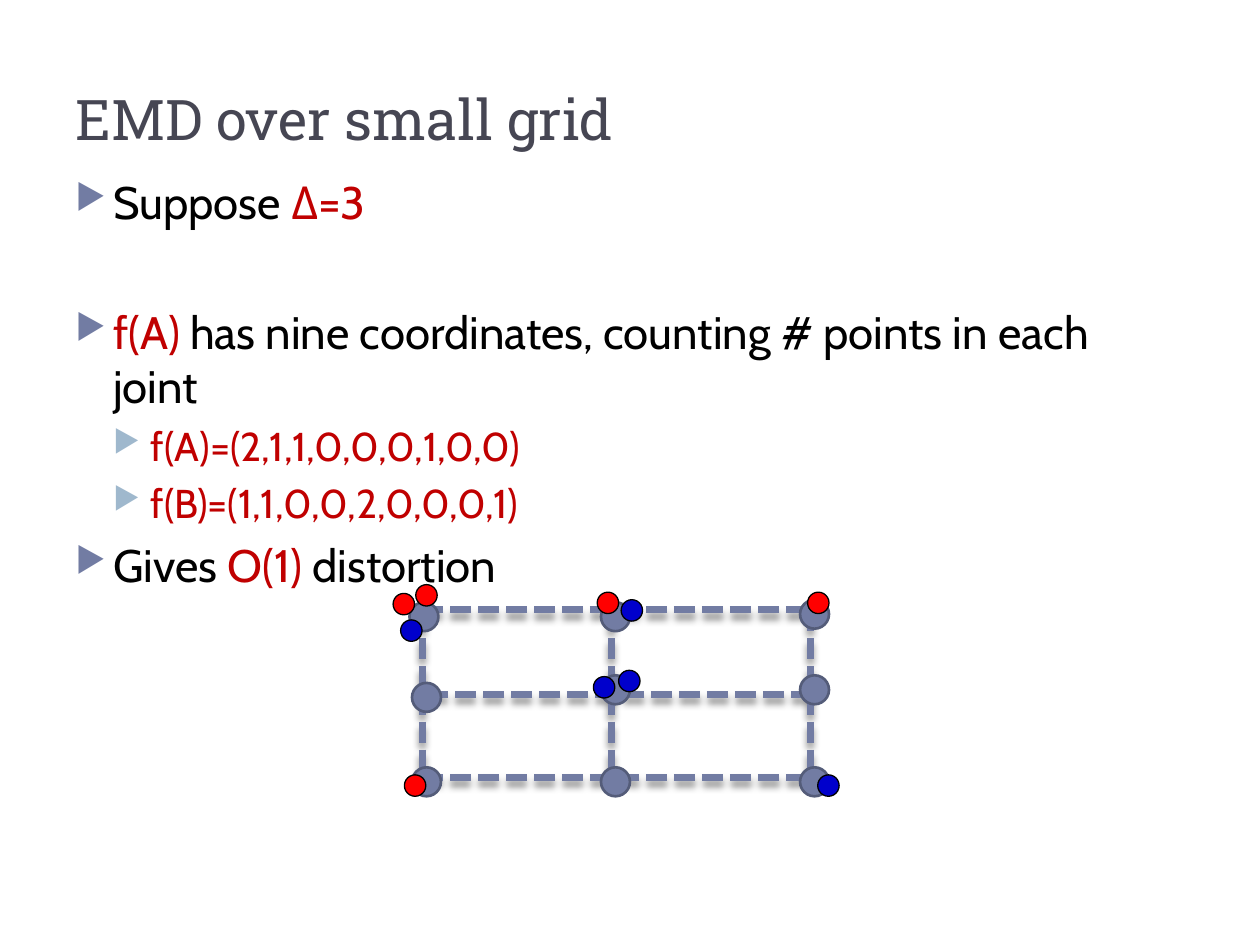
from lxml import etree
from pptx import Presentation
from pptx.dml.color import RGBColor
from pptx.enum.dml import MSO_LINE
from pptx.enum.shapes import MSO_CONNECTOR, MSO_SHAPE
from pptx.enum.text import MSO_ANCHOR
from pptx.oxml.ns import qn
from pptx.util import Inches, Pt

STRAIGHT = MSO_CONNECTOR.STRAIGHT
OVAL = MSO_SHAPE.OVAL
DASH = MSO_LINE.SQUARE_DOT
TOP, BOTTOM = MSO_ANCHOR.TOP, MSO_ANCHOR.BOTTOM

THEME = {
    "head": "Roboto Slab", "body": "Cabin",
    "title": "464653", "text": "000000", "math": "C00000",
    "node": "727CA3", "rim": "545C79", "sub": "9FB8CD",
    "red": "FF0000", "blue": "0000CC",
    "title_size": 32, "sizes": (26, 23), "marks": ("node", "sub"),
}

TITLE = [(0, None, [("EMD over small grid", "title")])]
BODY = [
    (0, 6, [("Suppose ", "text"), ("Δ=3", "math")]),
    (0, 43, [("f(A) ", "math"),
             ("has nine coordinates, counting # points in each joint", "text")]),
    (1, 5, [("f(A)=(2,1,1,0,0,0,1,0,0)", "math")]),
    (1, 5, [("f(B)=(1,1,0,0,2,0,0,0,1)", "math")]),
    (0, 6, [("Gives", "text"), (" O(1) ", "math"), ("distortion", "text")]),
]

COLS = (3.35, 4.85, 6.43)
ROWS = ((4.84, 3.35, 6.39), (5.51, 3.39, 6.43), (6.17, 3.35, 6.39))
NODES = [
    (3.25, 4.78), (4.77, 4.78), (6.35, 4.76),
    (3.27, 5.42), (4.77, 5.36), (6.35, 5.36),
    (3.27, 6.09), (4.77, 6.09), (6.35, 6.09),
]
POINTS = {
    "red": [(3.3, 4.64), (3.12, 4.71), (4.74, 4.7), (6.41, 4.7), (3.21, 6.15)],
    "blue": [(3.18, 4.92), (4.93, 4.76), (4.71, 5.37), (4.91, 5.32), (6.49, 6.15)],
}


def color(name):
    return RGBColor.from_string(THEME[name])


def add_xml(parent, tag, **attrs):
    return etree.SubElement(parent, qn(tag), {k: str(v) for k, v in attrs.items()})


def add_mark(para, level):
    props = para._p.get_or_add_pPr()
    props.set("marL", str(Inches(0.3 * (level + 1))))
    props.set("indent", str(Inches(-0.3)))
    tint = add_xml(props, "a:buClr")
    add_xml(tint, "a:srgbClr", val=THEME[THEME["marks"][level]])
    add_xml(props, "a:buSzPct", val=76000)
    add_xml(props, "a:buChar", char="▶")


def add_text(shapes, paras, box, font, sizes, anchor=TOP, marks=False):
    frame = shapes.add_textbox(*map(Inches, box)).text_frame
    frame.word_wrap = True
    frame.vertical_anchor = anchor
    for i, (level, gap, runs) in enumerate(paras):
        para = frame.add_paragraph() if i else frame.paragraphs[0]
        para.level = level
        if gap is not None:
            para.space_before = Pt(gap)
        if marks:
            add_mark(para, level)
        for words, tint in runs:
            run = para.add_run()
            run.text = words
            run.font.name = font
            run.font.size = Pt(sizes[level])
            run.font.color.rgb = color(tint)


def add_edge(shapes, x1, y1, x2, y2):
    edge = shapes.add_connector(STRAIGHT, *map(Inches, (x1, y1, x2, y2)))
    edge.line.color.rgb = color("node")
    edge.line.width = Pt(4)
    edge.line.dash_style = DASH
    glow = add_xml(edge._element.spPr, "a:effectLst")
    shade = add_xml(glow, "a:outerShdw", blurRad=Pt(4), dist=Pt(3.4),
                    dir=5400000, rotWithShape=0)
    tint = add_xml(shade, "a:srgbClr", val=THEME["text"])
    add_xml(tint, "a:alpha", val=40000)


def add_dot(shapes, spot, size, fill, rim, width):
    dot = shapes.add_shape(OVAL, *map(Inches, (*spot, size, size)))
    dot.shadow.inherit = False
    dot.fill.solid()
    dot.fill.fore_color.rgb = color(fill)
    dot.line.color.rgb = color(rim)
    dot.line.width = Pt(width)


def main():
    deck = Presentation()
    deck.slide_width, deck.slide_height = Inches(10), Inches(7.5)
    shapes = deck.slides.add_slide(deck.slide_layouts[6]).shapes
    add_text(shapes, TITLE, (0.5, 0.17, 9, 1.08), THEME["head"],
             (THEME["title_size"],), anchor=BOTTOM)
    add_text(shapes, BODY, (0.5, 1.33, 9, 5.4), THEME["body"],
             THEME["sizes"], marks=True)

    grid = shapes.add_group_shape().shapes
    for y, left, right in ROWS:
        add_edge(grid, left, y, right, y)
    for x in COLS:
        add_edge(grid, x, ROWS[0][0], x, ROWS[-1][0])
    for spot in NODES:
        add_dot(grid, spot, 0.23, "node", "rim", 1.5)
    for tint, spots in POINTS.items():
        for spot in spots:
            add_dot(grid, spot, 0.17, tint, "text", 0.75)
    deck.save("out.pptx")


if __name__ == "__main__":
    main()
